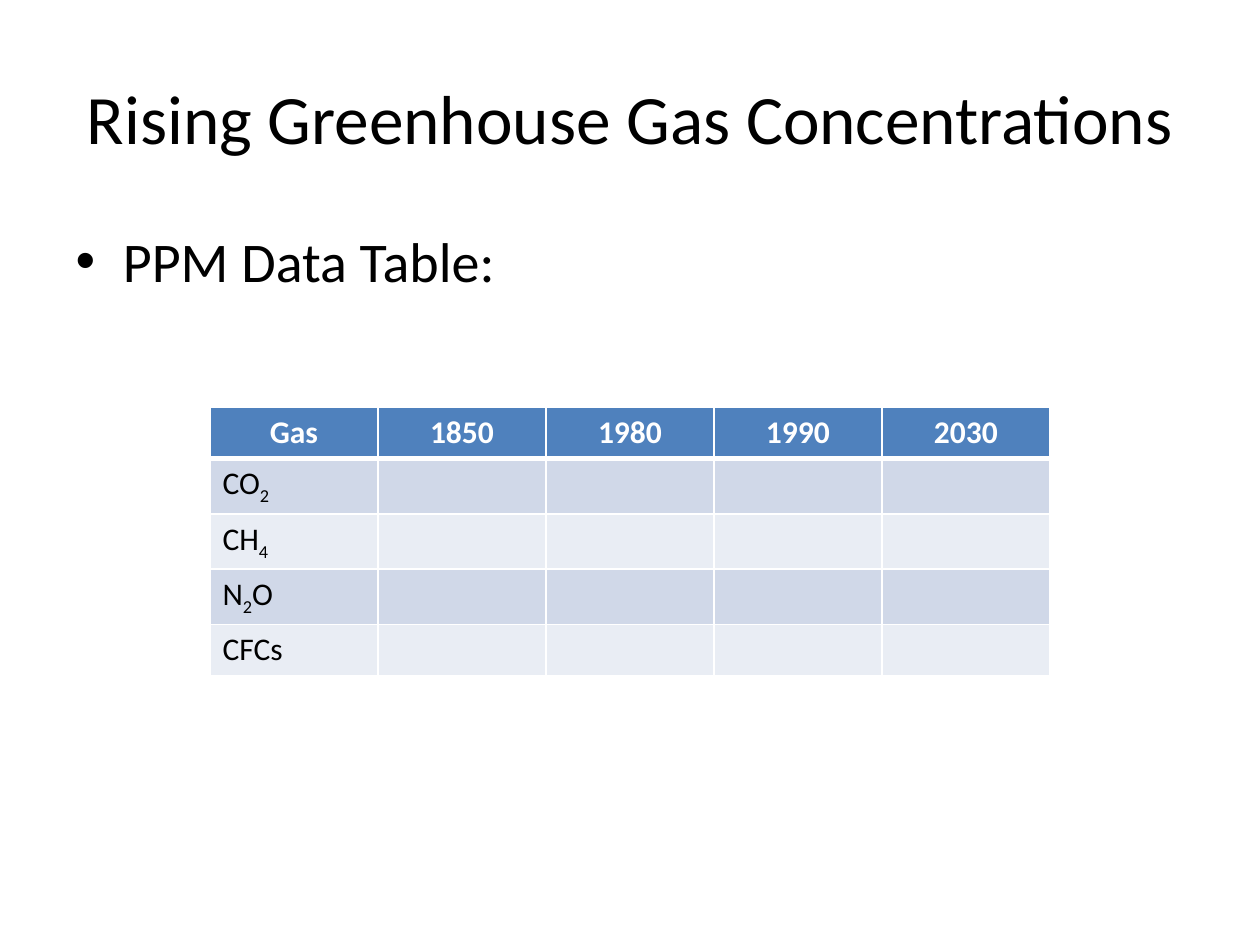
from lxml.etree import SubElement
from pptx import Presentation
from pptx.dml.color import RGBColor
from pptx.enum.text import MSO_ANCHOR, PP_ALIGN
from pptx.oxml.ns import qn
from pptx.util import Pt

HEADERS = ["Gas", "1850", "1980", "1990", "2030"]
GASES = ["CO2", "CH4", "N2O", "CFCs"]
HEADER_FILL = "4F81BD"
BAND_FILLS = ["D0D8E8", "E9EDF4"]


def color(value):
    return RGBColor.from_string(value)


def write(text_frame, text, size, fill="000000", bold=False, align=PP_ALIGN.LEFT, formula=False):
    """Write one paragraph; in a formula, digits become subscripts."""
    paragraph = text_frame.paragraphs[0]
    paragraph.alignment = align
    for part in text if formula else [text]:
        run = paragraph.add_run()
        run.text = part
        font = run.font
        font.name, font.size, font.bold = "Calibri", Pt(size), bold
        font.color.rgb = color(fill)
        if formula and part.isdigit():
            run._r.get_or_add_rPr().set("baseline", "-25000")


def place(shape, box):
    shape.left, shape.top, shape.width, shape.height = map(Pt, box)


def set_borders(cell, top=1, bottom=1, line="FFFFFF"):
    properties = cell._tc.get_or_add_tcPr()
    for side, width in (("L", 1), ("R", 1), ("T", top), ("B", bottom)):
        border = SubElement(properties, qn(f"a:ln{side}"), w=str(Pt(width)))
        fill = SubElement(border, qn("a:solidFill"))
        SubElement(fill, qn("a:srgbClr"), val=line)


def add_title(slide, box):
    title = slide.shapes.title
    place(title, box)
    title.text_frame.vertical_anchor = MSO_ANCHOR.MIDDLE
    write(title.text_frame, "Rising Greenhouse Gas Concentrations", 39.6, align=PP_ALIGN.CENTER)


def add_body(slide, box):
    body = slide.placeholders[1]
    place(body, box)
    write(body.text_frame, "PPM Data Table:", 32)


def add_gas_table(slide, box):
    row_count = len(GASES) + 1
    table = slide.shapes.add_table(row_count, len(HEADERS), *map(Pt, box)).table
    for row in range(row_count):
        for column in range(len(HEADERS)):
            cell = table.cell(row, column)
            set_borders(cell, top=3 if row == 1 else 1, bottom=3 if row == 0 else 1)
            cell.fill.solid()
            cell.fill.fore_color.rgb = color(BAND_FILLS[(row - 1) % 2] if row else HEADER_FILL)
    for column, header in enumerate(HEADERS):
        write(table.cell(0, column).text_frame, header, 18, fill="FFFFFF", bold=True,
              align=PP_ALIGN.CENTER)
    for row, gas in enumerate(GASES, start=1):
        has_digit = any(character.isdigit() for character in gas)
        write(table.cell(row, 0).text_frame, gas, 18, formula=has_digit)


def main():
    presentation = Presentation()
    presentation.slide_width, presentation.slide_height = Pt(720), Pt(540)
    slide = presentation.slides.add_slide(presentation.slide_layouts[1])
    add_title(slide, (36, 21.6, 648, 90))
    add_body(slide, (36, 126, 648, 356.4))
    add_gas_table(slide, (120, 232.8, 480, 146))
    presentation.save("out.pptx")


if __name__ == "__main__":
    main()
